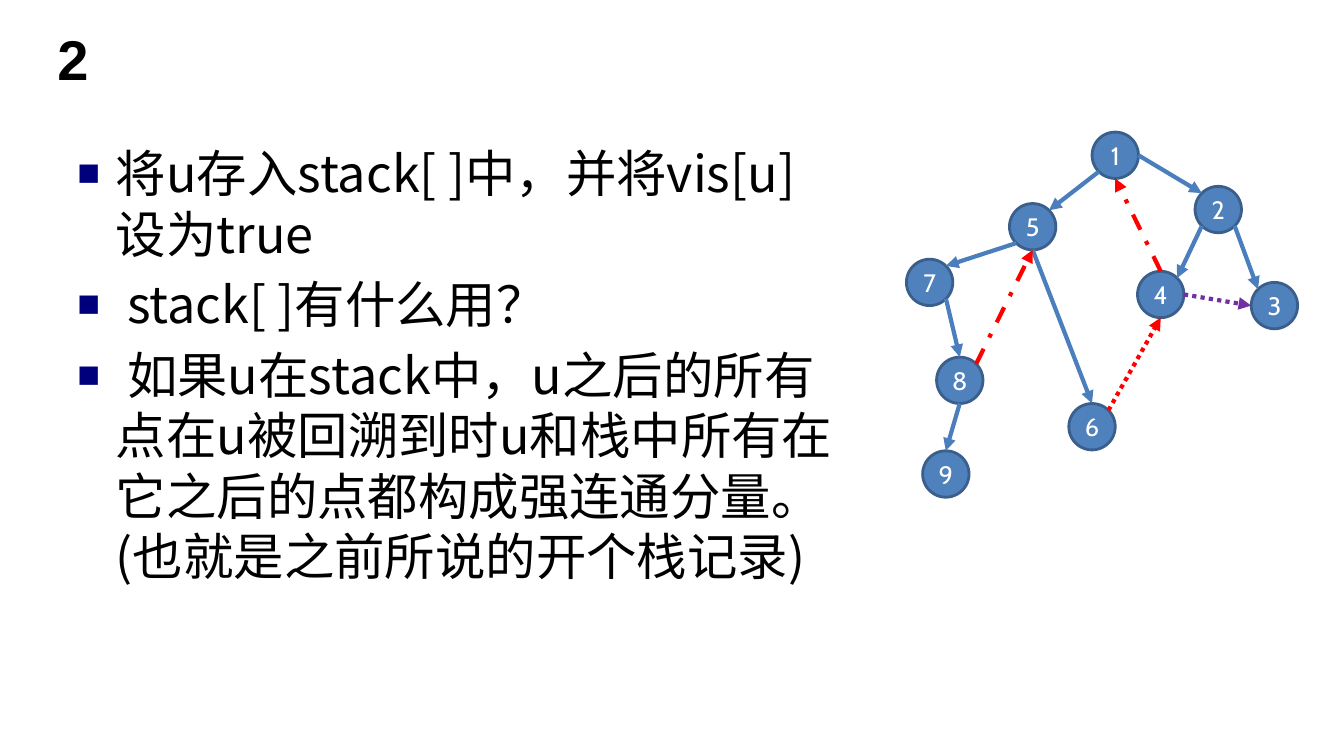
import math
import pptx
import pptx.dml.color
import pptx.enum.dml
import pptx.enum.shapes
import pptx.enum.text
import pptx.oxml
import pptx.oxml.ns
import pptx.util

Pt = pptx.util.Pt
Inches = pptx.util.Inches
LINE = pptx.enum.dml.MSO_LINE
ANCHOR = pptx.enum.text.MSO_ANCHOR
ALIGN = pptx.enum.text.PP_ALIGN

THEME = {
    "title": {"name": "Arial", "size": 40, "bold": True, "color": "000000"},
    "body": {"name": "Noto Sans CJK SC", "size": 36, "bold": False, "color": "000000"},
    "node": {"name": "Cabin", "size": 18, "bold": False, "color": "FFFFFF"},
    "bullet": "00007D",
    "node_fill": "4F81BD",
    "node_line": "3A5F8C",
    "node_line_width": 2,
    "edge_width": 3,
}
EDGE_STYLES = {
    "tree": {"color": "4B7EBC", "dash": None},
    "back": {"color": "FF0000", "dash": LINE.DASH_DOT},
    "stacked": {"color": "FF0000", "dash": LINE.ROUND_DOT},
    "cross": {"color": "7030A0", "dash": LINE.ROUND_DOT},
}

SLIDE_SIZE = (Inches(13.33), Inches(7.5))
TITLE_BOX = (3.53, 1.47, 93.02, 12.53)
BODY_BOX = (5.03, 17.47, 58.59, 72.13)
GRAPH_BOX = (67.44, 17.47, 29.11, 48.27)
GRAPH_COLUMNS = 8.43

STEPS = [
    "将u存入stack[ ]中，并将vis[u]设为true",
    " stack[ ]有什么用？",
    " 如果u在stack中，u之后的所有点在u被回溯到时u和栈中所有在它之后的点都构成强连通分量。(也就是之前所说的开个栈记录)",
]
NODES = {
    1: (4, 0), 2: (6.22, 1.17), 3: (7.43, 3.24), 4: (4.98, 3), 5: (2.22, 1.54),
    6: (3.5, 5.85), 7: (0, 2.74), 8: (0.65, 4.85), 9: (0.35, 6.87),
}
COMPASS = {side: turn * math.pi / 4 for turn, side in
           enumerate(("E", "SE", "S", "SW", "W", "NW", "N", "NE"))}
EDGES = [
    (1, "E", 2, "NW", "tree"), (2, "SE", 3, "NW", "tree"),
    (2, "SW", 4, "NE", "tree"), (4, "N", 1, "S", "back"),
    (1, "SW", 5, "NE", "tree"), (5, "S", 6, "N", "tree"),
    (6, "NE", 4, "S", "stacked"), (4, "E", 3, "W", "cross"),
    (5, "SW", 7, "NE", "tree"), (7, "SE", 8, "N", "tree"),
    (8, "NE", 5, "S", "back"), (8, "S", 9, "N", "tree"),
]


def rgb(code):
    """Turn a hex code into a colour."""
    return pptx.dml.color.RGBColor.from_string(code)


def place(box):
    """Turn hundredths of the slide into lengths."""
    return [round(share * SLIDE_SIZE[axis % 2] / 100) for axis, share in enumerate(box)]


def set_all(target, values):
    """Set each named attribute on the target."""
    for name, value in values.items():
        setattr(target, name, value)


def add_child(parent, tag, **attributes):
    """Append a drawing element to its parent."""
    child = pptx.oxml.parse_xml(f"<a:{tag} {pptx.oxml.ns.nsdecls('a')}/>")
    for name, value in attributes.items():
        child.set(name, value)
    parent.append(child)
    return child


def write(paragraph, text, style):
    """Add one run in the given text style."""
    run = paragraph.add_run()
    run.text = text
    set_all(run.font, {"name": style["name"], "size": Pt(style["size"]), "bold": style["bold"]})
    run.font.color.rgb = rgb(style["color"])
    add_child(run.font._element, "ea", typeface=style["name"])


def add_title(slide, box, text):
    """Write the slide title in its box."""
    frame = slide.shapes.add_textbox(*place(box)).text_frame
    set_all(frame, {"word_wrap": True, "vertical_anchor": ANCHOR.MIDDLE})
    write(frame.paragraphs[0], text, THEME["title"])


def add_steps(slide, box, steps):
    """Write the bulleted steps in their box."""
    frame = slide.shapes.add_textbox(*place(box)).text_frame
    set_all(frame, {"word_wrap": True, "margin_top": Inches(0.1)})
    size = THEME["body"]["size"]
    indent = Inches(0.38)
    for number, step in enumerate(steps):
        paragraph = frame.paragraphs[0] if number == 0 else frame.add_paragraph()
        properties = paragraph._p.get_or_add_pPr()
        properties.set("marL", str(indent))
        properties.set("indent", str(-indent))
        add_child(add_child(properties, "buClr"), "srgbClr", val=THEME["bullet"])
        add_child(properties, "buSzPct", val="75000")
        add_child(properties, "buFont", typeface="Arial")
        add_child(properties, "buChar", char="■")
        set_all(paragraph, {"line_spacing": Pt(size * 1.2),
                            "space_before": Pt(size * 0.2 if number else 0)})
        write(paragraph, step, THEME["body"])


def add_node(slide, left, top, diameter, label):
    """Draw one numbered graph node."""
    node = slide.shapes.add_shape(
        pptx.enum.shapes.MSO_SHAPE.OVAL, round(left), round(top), round(diameter), round(diameter))
    node.shadow.inherit = False
    node.fill.solid()
    node.fill.fore_color.rgb = rgb(THEME["node_fill"])
    node.line.color.rgb = rgb(THEME["node_line"])
    node.line.width = Pt(THEME["node_line_width"])
    set_all(node.text_frame, {
        "margin_left": 0, "margin_right": 0, "margin_top": 0, "margin_bottom": 0,
        "word_wrap": False, "vertical_anchor": ANCHOR.MIDDLE})
    paragraph = node.text_frame.paragraphs[0]
    paragraph.alignment = ALIGN.CENTER
    write(paragraph, str(label), THEME["node"])


def add_edge(slide, start, end, style):
    """Draw one arrow between two points."""
    edge = slide.shapes.add_connector(
        pptx.enum.shapes.MSO_CONNECTOR.STRAIGHT, *map(round, (*start, *end)))
    edge.line.color.rgb = rgb(style["color"])
    set_all(edge.line, {"width": Pt(THEME["edge_width"]), "dash_style": style["dash"]})
    add_child(edge.line._get_or_add_ln(), "tailEnd", type="triangle")
    add_child(edge._element.spPr, "effectLst")


def add_graph(slide, box):
    """Draw the search graph on a grid of node-sized cells."""
    left, top, width, _ = place(box)
    cell = width / GRAPH_COLUMNS

    def rim(label, side):
        """Find a compass point on the rim of a node."""
        column, row = NODES[label]
        angle = COMPASS[side]
        return (left + cell * (column + 0.5 + math.cos(angle) / 2),
                top + cell * (row + 0.5 + math.sin(angle) / 2))

    for label, (column, row) in NODES.items():
        add_node(slide, left + column * cell, top + row * cell, cell, label)
    for source, source_side, target, target_side, kind in EDGES:
        add_edge(slide, rim(source, source_side), rim(target, target_side), EDGE_STYLES[kind])


def main():
    """Build and save the slide."""
    deck = pptx.Presentation()
    deck.slide_width, deck.slide_height = SLIDE_SIZE
    slide = deck.slides.add_slide(deck.slide_layouts[6])
    add_title(slide, TITLE_BOX, "2")
    add_steps(slide, BODY_BOX, STEPS)
    add_graph(slide, GRAPH_BOX)
    deck.save("out.pptx")


if __name__ == "__main__":
    main()
